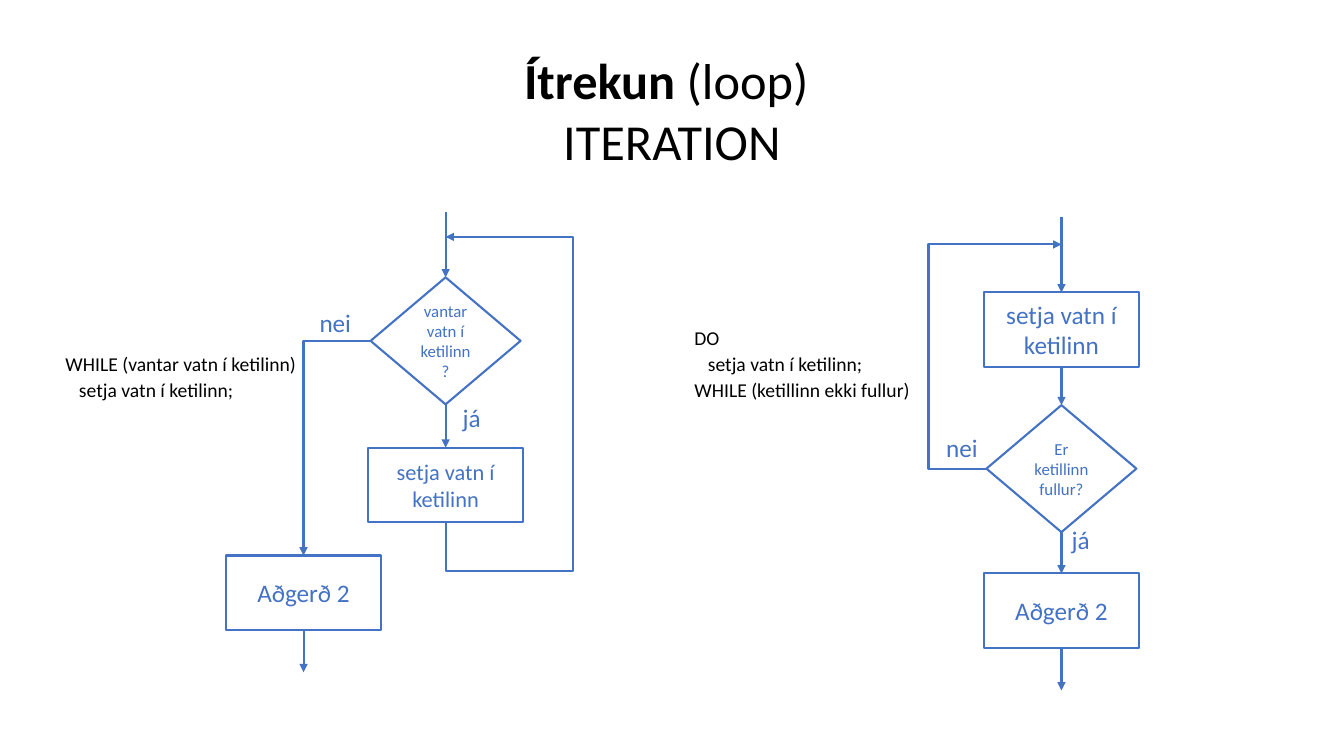
"""Build a slide with flowcharts of a while loop and a do-while loop."""
from pptx import Presentation, util as u
from pptx.dml.color import RGBColor
from pptx.enum import shapes, text
from pptx.oxml.ns import qn
from lxml import etree

COLORS = {"blue": "4472C4", "black": "000000", "white": "FFFFFF"}
Cm, Pt = u.Cm, u.Pt
RECT, DIAMOND = shapes.MSO_SHAPE.RECTANGLE, shapes.MSO_SHAPE.DIAMOND
BOX, CHOICE = (3.91, 1.88), (3.78, 3.2)
WHILE_X, NEXT_X, DO_X = 11.23, 7.65, 26.75


def write(sp, paragraphs, size=18, color="blue", align=text.PP_ALIGN.CENTER,
          anchor=text.MSO_ANCHOR.MIDDLE, space=0):
    """Fill a shape with paragraphs, each a list of (text, bold) runs."""
    tf = sp.text_frame
    tf.word_wrap = True
    tf.vertical_anchor = anchor
    for i, runs in enumerate(paragraphs):
        p = tf.add_paragraph() if i else tf.paragraphs[0]
        p.alignment = align
        p.space_before = p.space_after = Pt(space)
        for words, bold in runs:
            r = p.add_run()
            r.text = words
            r.font.name, r.font.size, r.font.bold = "Calibri", Pt(size), bold
            r.font.color.rgb = RGBColor.from_string(COLORS[color])


def arrow(s, *points):
    """Draw a straight or bent arrow through points given in centimetres."""
    pts = [(Cm(x), Cm(y)) for x, y in points]
    if len(pts) == 2:
        sp = s.shapes.add_connector(shapes.MSO_CONNECTOR.STRAIGHT, *pts[0], *pts[1])
        etree.SubElement(sp._element.spPr, qn("a:effectLst"))
    else:
        builder = s.shapes.build_freeform(*pts[0])
        builder.add_line_segments(pts[1:], close=False)
        sp = builder.convert_to_shape()
        sp.fill.background()
        sp.shadow.inherit = False
    sp.line.color.rgb = RGBColor.from_string(COLORS["blue"])
    sp.line.width = Pt(1.5)
    etree.SubElement(sp.line._get_or_add_ln(), qn("a:tailEnd"), type="triangle")


prs = Presentation()
prs.slide_width, prs.slide_height = Cm(33.87), Cm(19.05)
s = prs.slides.add_slide(prs.slide_layouts[5])

title = s.shapes.title
title.left, title.top, title.width, title.height = Cm(12.4), Cm(1.12), Cm(9.07), Cm(3.33)
write(title, [[("Ítrekun", True), (" (loop) ", False)], [("ITERATION", False)]],
      size=36, color="black", anchor=text.MSO_ANCHOR.TOP)

codes = [
    (1.4, 8.74, 1.52, ["WHILE (vantar vatn í ketilinn)", "setja vatn í ketilinn;"]),
    (17.25, 8.08, 2.18, ["DO", "setja vatn í ketilinn;", "WHILE (ketillinn ekki fullur)"]),
]
for left, top, height, lines in codes:
    sp = s.shapes.add_textbox(Cm(left), Cm(top), Cm(6.99), Cm(height))
    sp.fill.solid()
    sp.fill.fore_color.rgb = RGBColor.from_string(COLORS["white"])
    write(sp, [[(line, False)] for line in lines], size=14, color="black",
          align=text.PP_ALIGN.LEFT, anchor=text.MSO_ANCHOR.TOP, space=1)
    body = sp.text_frame.paragraphs[1]._p.get_or_add_pPr()
    body.set("marL", str(Cm(0.34)))
    body.set("indent", "0")

steps = [
    (DIAMOND, WHILE_X, 6.99, CHOICE, "vantar vatn í ketilinn?", 12),
    (RECT, WHILE_X, 11.28, BOX, "setja vatn í ketilinn", 16),
    (RECT, NEXT_X, 14, BOX, "Aðgerð 2", 18),
    (RECT, DO_X, 7.37, BOX, "setja vatn í ketilinn", 18),
    (DIAMOND, DO_X, 10.21, CHOICE, "Er ketillinn fullur?", 12),
    (RECT, DO_X, 14.45, BOX, "Aðgerð 2", 18),
]
for kind, center, top, (width, height), words, size in steps:
    sp = s.shapes.add_shape(kind, Cm(center - width / 2), Cm(top), Cm(width), Cm(height))
    sp.shadow.inherit = False
    sp.fill.background()
    sp.line.color.rgb = RGBColor.from_string(COLORS["blue"])
    sp.line.width = Pt(1.5)
    write(sp, [[(words, False)]], size=size)

labels = [("nei", 7.37, 7.37, 2.16), ("já", 11.02, 9.78, 1.73),
          ("nei", 23.16, 10.52, 2.16), ("já", 26.37, 12.85, 1.73)]
for words, left, top, width in labels:
    sp = s.shapes.add_textbox(Cm(left), Cm(top), Cm(width), Cm(1.5))
    write(sp, [[(words, False)]])

straight = [(WHILE_X, 5.33, 6.99), (WHILE_X, 10.19, 11.28), (NEXT_X, 15.88, 16.94),
            (DO_X, 5.46, 7.37), (DO_X, 9.25, 10.21), (DO_X, 13.41, 14.45),
            (DO_X, 16.33, 17.4)]
for x, start, end in straight:
    arrow(s, (x, start), (x, end))

arrow(s, (WHILE_X - CHOICE[0] / 2, 8.59), (NEXT_X, 8.59), (NEXT_X, 14))
arrow(s, (WHILE_X, 13.16), (WHILE_X, 14.4), (14.43, 14.4), (14.43, 5.97), (WHILE_X, 5.97))
arrow(s, (DO_X - CHOICE[0] / 2, 11.81), (23.4, 11.81), (23.4, 6.16), (DO_X, 6.16))

prs.save("out.pptx")
